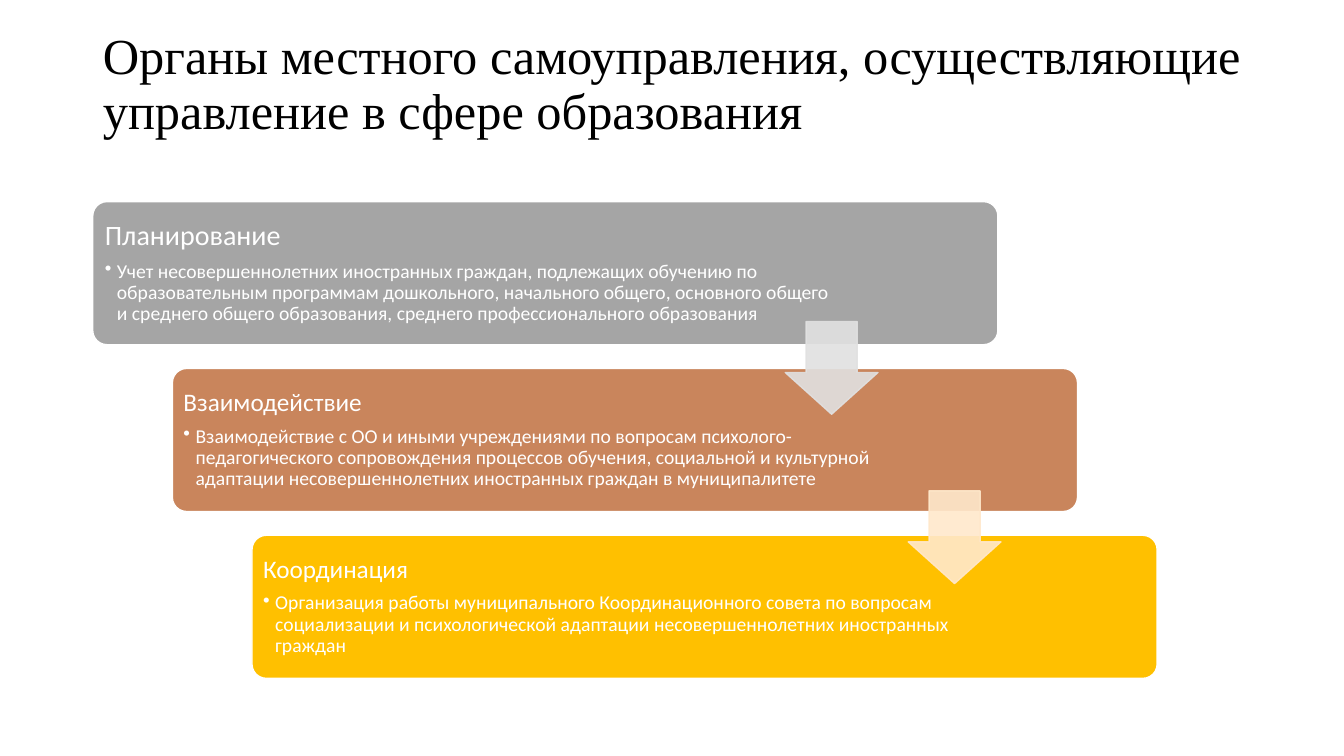
from lxml.etree import SubElement
from pptx import Presentation
from pptx.dml.color import RGBColor
from pptx.enum.shapes import MSO_SHAPE
from pptx.enum.text import MSO_ANCHOR, PP_ALIGN
from pptx.oxml.ns import qn
from pptx.util import Inches, Pt

BLACK = RGBColor(0x00, 0x00, 0x00)
WHITE = RGBColor(0xFF, 0xFF, 0xFF)
GREY = RGBColor(0xA5, 0xA5, 0xA5)
COPPER = RGBColor(0xC9, 0x85, 0x5C)
GOLD = RGBColor(0xFF, 0xC0, 0x00)
PALE_GREY = RGBColor(0xE1, 0xE1, 0xE1)
PALE_GOLD = RGBColor(0xFF, 0xE8, 0xCB)

LEFT, TOP = 6.9, 26.67
STAIRS_WIDTH, STAIRS_HEIGHT = 79.2, 63.07
CARD_WIDTH, CARD_HEIGHT = 67.35, 18.93
MARGIN_X, MARGIN_Y = 0.3, 0.53
ARROW_WIDTH, ARROW_HEIGHT = 6.9, 12.27

STAGES = [
    (GREY, 20, 55.88, 0.08, "Планирование",
     "Учет несовершеннолетних иностранных граждан, подлежащих обучению по "
     "образовательным программам дошкольного, начального общего, основного общего "
     "и среднего общего образования, среднего профессионального образования"),
    (COPPER, 18, 53.85, 0.07, "Взаимодействие",
     "Взаимодействие с ОО и иными учреждениями по вопросам психолого-педагогического "
     "сопровождения процессов обучения, социальной и культурной адаптации "
     "несовершеннолетних иностранных граждан в муниципалитете"),
    (GOLD, 18, 53.85, 0.07, "Координация",
     "Организация работы муниципального Координационного совета по вопросам "
     "социализации и психологической адаптации несовершеннолетних иностранных граждан"),
]
TRANSITIONS = [(58.43, 42.53, PALE_GREY), (67.58, 64.93, PALE_GOLD)]


class StairSlide:
    heading_font = "Times New Roman"
    body_font = "Calibri"
    body_size = 14

    def __init__(self, deck):
        self.width, self.height = deck.slide_width, deck.slide_height
        self.slide = deck.slides.add_slide(deck.slide_layouts[5])

    def area(self, left, top, width, height):
        return (round(self.width * left / 100), round(self.height * top / 100),
                round(self.width * width / 100), round(self.height * height / 100))

    def style(self, paragraph, size, font, color, after=0):
        paragraph.alignment = PP_ALIGN.LEFT
        paragraph.line_spacing = 0.9
        paragraph.space_after = Pt(after)
        for run in paragraph.runs:
            run.font.size = Pt(size)
            run.font.name = font
            run.font.color.rgb = color

    def title(self, wording):
        heading = self.slide.shapes.title
        heading.left, heading.top, heading.width, heading.height = self.area(
            LEFT, 5.33, 86.25, 19.33)
        frame = heading.text_frame
        frame.text = wording
        frame.word_wrap = True
        frame.vertical_anchor = MSO_ANCHOR.BOTTOM
        frame.margin_top, frame.margin_bottom = 0, Inches(0.46)
        self.style(frame.paragraphs[0], 36, self.heading_font, BLACK)

    def block(self, preset, area, color, adjustments):
        block = self.slide.shapes.add_shape(preset, *self.area(*area))
        block.shadow.inherit = False
        for index, value in enumerate(adjustments):
            block.adjustments[index] = value
        block.fill.solid()
        block.fill.fore_color.rgb = color
        block.line.width = Pt(1)
        return block

    def card(self, left, top, color):
        card = self.block(MSO_SHAPE.ROUNDED_RECTANGLE,
                          (left, top, CARD_WIDTH, CARD_HEIGHT), color, [0.1])
        card.line.color.rgb = WHITE

    def arrow(self, left, top, color):
        arrow = self.block(MSO_SHAPE.DOWN_ARROW,
                           (left, top, ARROW_WIDTH, ARROW_HEIGHT), color, [0.55, 0.45])
        arrow.line.color.rgb = color
        for tint in arrow.element.spPr.iter(qn("a:srgbClr")):
            SubElement(tint, qn("a:alpha"), val="90000")

    def description(self, area, margin, size, heading, duty):
        frame = self.slide.shapes.add_textbox(*self.area(*area)).text_frame
        frame.word_wrap = True
        frame.vertical_anchor = MSO_ANCHOR.MIDDLE
        frame.margin_left = frame.margin_right = Inches(margin)
        frame.margin_top = frame.margin_bottom = Inches(margin)
        frame.text = heading
        self.style(frame.paragraphs[0], size, self.body_font, WHITE, size * 0.35)
        item = frame.add_paragraph()
        item.text = duty
        item.level = 1
        self.style(item, self.body_size, self.body_font, WHITE, self.body_size * 0.15)
        properties = item._p.get_or_add_pPr()
        properties.set("marL", str(Inches(0.12)))
        properties.set("indent", str(-Inches(0.12)))
        SubElement(properties, qn("a:buChar"), char="•")


def main():
    deck = Presentation()
    deck.slide_width, deck.slide_height = Inches(13.33), Inches(7.5)
    stairs = StairSlide(deck)
    stairs.title("Органы местного самоуправления, осуществляющие "
                 "управление в сфере образования")
    step_x = (STAIRS_WIDTH - CARD_WIDTH) / (len(STAGES) - 1)
    step_y = (STAIRS_HEIGHT - CARD_HEIGHT) / (len(STAGES) - 1)
    for step, (color, size, text_width, margin, heading, duty) in enumerate(STAGES):
        left, top = LEFT + step * step_x, TOP + step * step_y
        stairs.card(left, top, color)
        text_area = (left + MARGIN_X, top + MARGIN_Y,
                     text_width, CARD_HEIGHT - 2 * MARGIN_Y)
        stairs.description(text_area, margin, size, heading, duty)
    for transition in TRANSITIONS:
        stairs.arrow(*transition)
    deck.save("out.pptx")


if __name__ == "__main__":
    main()
